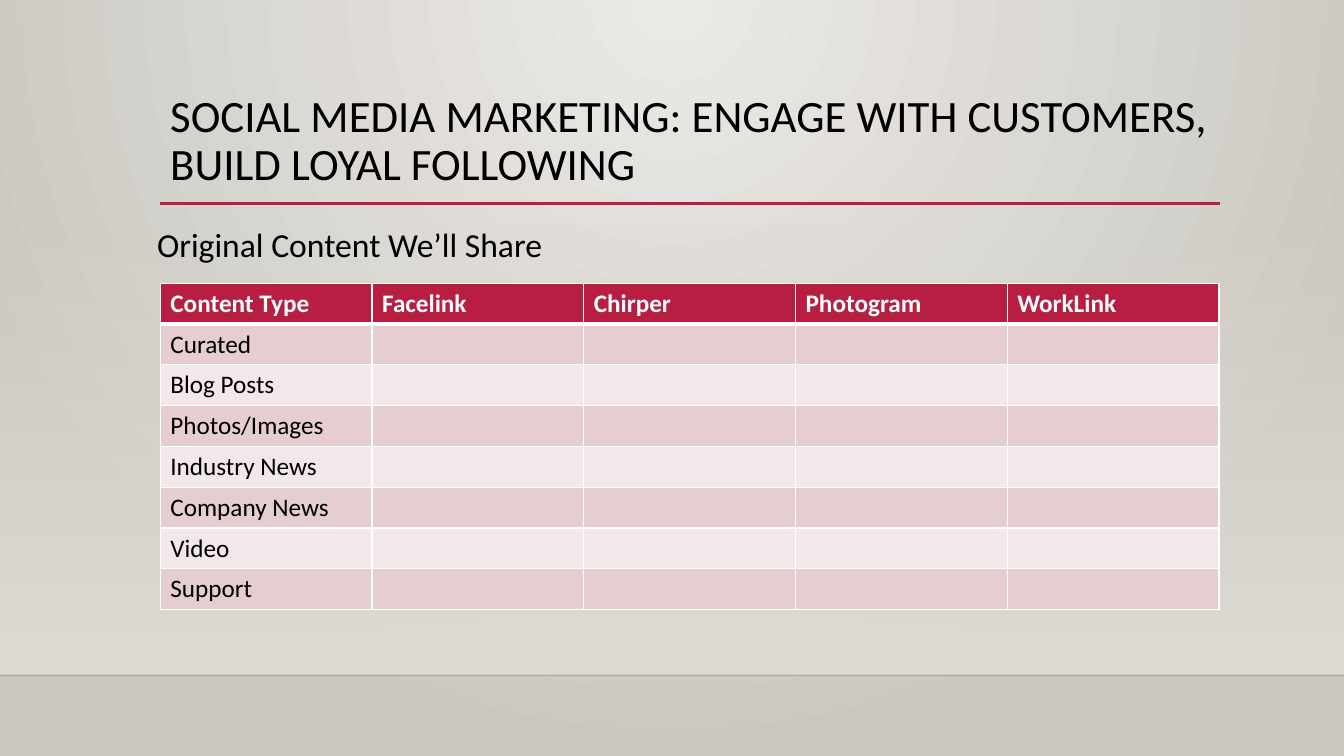
from lxml import etree
from pptx import Presentation
from pptx.dml.color import RGBColor
from pptx.enum import shapes, text
from pptx.oxml import ns
from pptx.util import Inches, Pt

BLACK = RGBColor(0, 0, 0)
WHITE = RGBColor(255, 255, 255)
CRIMSON = RGBColor(0xB7, 0x1E, 0x42)
ROSE = RGBColor(0xE6, 0xCD, 0xCF)
PALE_ROSE = RGBColor(0xF3, 0xE8, 0xE9)
SAND = RGBColor(0xDF, 0xDB, 0xD5)
LIGHT_STONE = RGBColor(0xEC, 0xEA, 0xE7)
DARK_STONE = RGBColor(0xCA, 0xC7, 0xC1)
FLOOR_EDGE = RGBColor(0, 0, 1)

FONT = "Calibri"
HEADERS = ["Content Type", "Facelink", "Chirper", "Photogram", "WorkLink"]
CONTENT_TYPES = ["Curated", "Blog Posts", "Photos/Images", "Industry News",
                 "Company News", "Video", "Support"]


def add_child(parent, tag, **attributes):
    return etree.SubElement(parent, ns.qn(tag), attributes)


def set_alpha(parent, percent):
    color = next(parent.iter(ns.qn("a:srgbClr")))
    add_child(color, "a:alpha", val=str(percent * 1000))


def set_gradient(fill, start, end):
    fill.gradient()
    for stop, color in zip(fill.gradient_stops, (start, end)):
        stop.color.rgb = color


def set_background(slide):
    set_gradient(slide.background.fill, LIGHT_STONE, DARK_STONE)
    gradient = next(slide.element.iter(ns.qn("a:gradFill")))
    gradient.remove(gradient.find(ns.qn("a:lin")))
    circle = add_child(gradient, "a:path", path="circle")
    add_child(circle, "a:fillToRect", l="43000", t="0", r="43000", b="100000")


def add_wall(slide, left, top, width, height):
    wall = slide.shapes.add_shape(shapes.MSO_SHAPE.RECTANGLE, left, top, width, height)
    wall.shadow.inherit = False
    wall.line.fill.background()
    set_gradient(wall.fill, SAND, SAND)
    wall.fill.gradient_angle = 270
    set_alpha(wall.element.spPr, 0)


def add_rule(slide, left, right, y, color, weight):
    rule = slide.shapes.add_connector(shapes.MSO_CONNECTOR.STRAIGHT, left, y, right, y)
    rule.line.color.rgb = color
    rule.line.width = Pt(weight)
    add_child(rule.element.spPr, "a:effectLst")
    return rule


def format_font(paragraph, size, color, bold=False):
    for run in paragraph.runs:
        run.font.name = FONT
        run.font.size = Pt(size)
        run.font.bold = bold
        run.font.color.rgb = color


def add_text(slide, left, top, width, height, wording, size, spacing=1.0):
    frame = slide.shapes.add_textbox(left, top, width, height).text_frame
    frame.word_wrap = True
    frame.vertical_anchor = text.MSO_ANCHOR.TOP
    frame.text = wording
    paragraph = frame.paragraphs[0]
    paragraph.line_spacing = spacing
    format_font(paragraph, size, BLACK)


def set_borders(cell, top, bottom):
    properties = cell._tc.get_or_add_tcPr()
    weights = {"a:lnL": 1, "a:lnR": 1, "a:lnT": top, "a:lnB": bottom}
    for tag, weight in weights.items():
        border = add_child(properties, tag, w=str(Pt(weight)))
        add_child(add_child(border, "a:solidFill"), "a:srgbClr", val=str(WHITE))


def fill_cell(cell, wording, row):
    is_header = row == 0
    set_borders(cell, 3 if row == 1 else 1, 3 if is_header else 1)
    cell.fill.solid()
    cell.fill.fore_color.rgb = CRIMSON if is_header else ROSE if row % 2 else PALE_ROSE
    cell.text = wording
    format_font(cell.text_frame.paragraphs[0], 18, WHITE if is_header else BLACK, is_header)


def add_content_table(slide, left, top, width, height):
    rows = [HEADERS] + [[name] + [""] * (len(HEADERS) - 1) for name in CONTENT_TYPES]
    frame = slide.shapes.add_table(len(rows), len(HEADERS), left, top, width, height)
    table = frame.table
    table.horz_banding = False
    for row, wordings in enumerate(rows):
        for column, wording in enumerate(wordings):
            fill_cell(table.cell(row, column), wording, row)


def main():
    presentation = Presentation()
    presentation.slide_width = Inches(13.33)
    presentation.slide_height = Inches(7.5)
    slide = presentation.slides.add_slide(presentation.slide_layouts[6])
    set_background(slide)
    add_wall(slide, 0, Inches(2.21), Inches(13.33), Inches(4.49))
    floor_edge = add_rule(slide, 0, Inches(13.33), Inches(6.7), FLOOR_EDGE, 1)
    set_alpha(floor_edge.element.spPr, 20)
    add_rule(slide, Inches(1.59), Inches(12.1), Inches(2.02), CRIMSON, 2.5)
    add_text(slide, Inches(1.59), Inches(0.88), Inches(10.5), Inches(1.15),
             "SOCIAL MEDIA MARKETING: ENGAGE WITH CUSTOMERS, BUILD LOYAL FOLLOWING",
             32, 0.9)
    add_content_table(slide, Inches(1.59), Inches(2.81), Inches(10.5), Inches(3.24))
    add_text(slide, Inches(1.46), Inches(2.17), Inches(6.01), Inches(0.5),
             "Original Content We’ll Share", 24)
    presentation.save("out.pptx")


if __name__ == "__main__":
    main()
